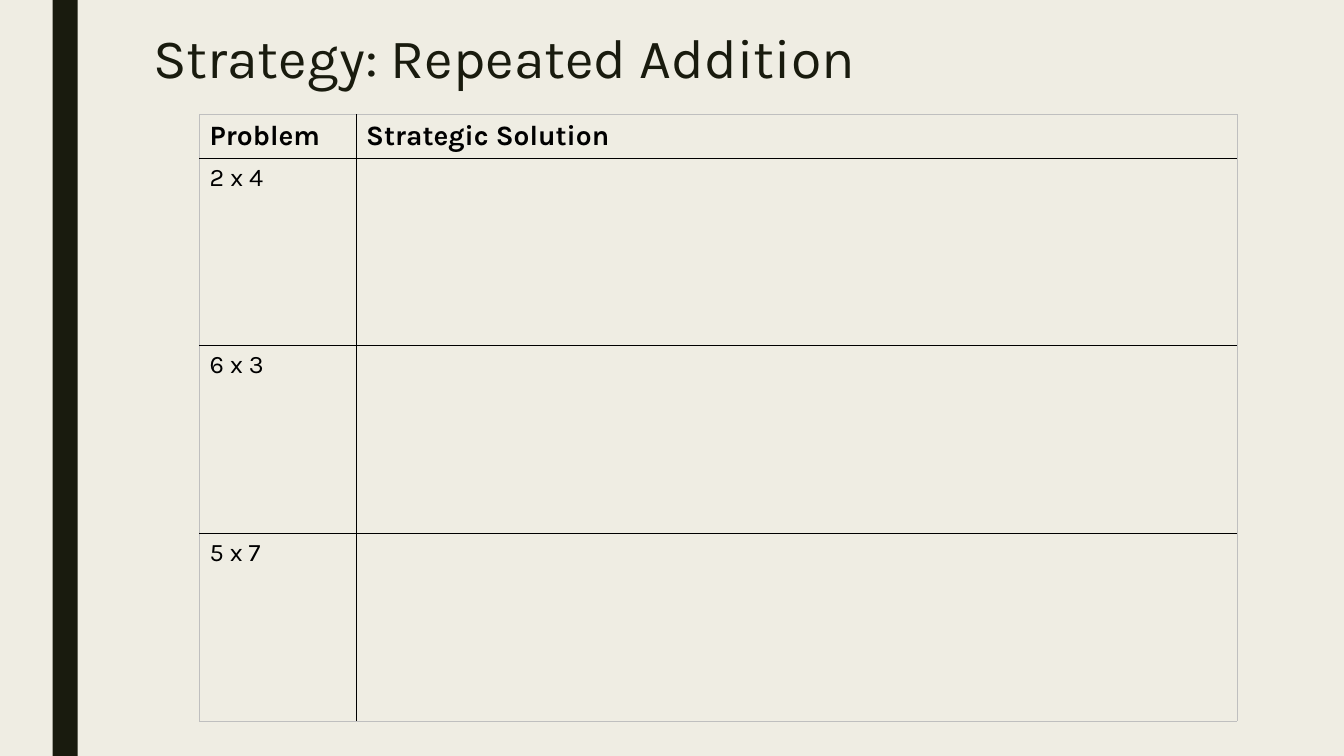
from lxml.etree import SubElement
from pptx import Presentation
from pptx.dml.color import RGBColor
from pptx.enum.shapes import MSO_SHAPE
from pptx.enum.text import MSO_ANCHOR
from pptx.oxml.ns import qn
from pptx.util import Pt

TITLE = "Strategy: Repeated Addition"
ROWS = [
    ("Problem", "Strategic Solution"),
    ("2 x 4", ""),
    ("6 x 3", ""),
    ("5 x 7", ""),
]
THEME = {
    "back": "EFEDE3", "dark": "191B0E", "ink": "000000", "edge": "BFBFBF",
    "face": "Karla", "title": 39.6, "head": 20, "body": 18,
}
PAGE = (960, 540)
BAR = (37.5, 0, 18, 540)
HEAD = (102.24, 16.56, 756, 54)
LEFT, TOP = 142.6, 81.7
COLS = (111.8, 629.2)
HIGH = [30.7] + [134] * (len(ROWS) - 1)


def tint(name):
    return RGBColor.from_string(THEME[name])


def write(frame, text, size, color, bold=False):
    para = frame.paragraphs[0]
    font = para.font
    if text:
        run = para.add_run()
        run.text = text
        font = run.font
    form = {"name": THEME["face"], "size": Pt(THEME[size]), "bold": bold}
    for key, value in form.items():
        setattr(font, key, value)
    font.color.rgb = tint(color)
    return para


def rule(cell, row, col):
    props = cell._tc.get_or_add_tcPr()
    outer = {
        "L": col == 0, "R": col == len(COLS) - 1,
        "T": row == 0, "B": row == len(ROWS) - 1,
    }
    for side, edge in outer.items():
        width = Pt(0.5 if edge else 1)
        line = SubElement(props, qn(f"a:ln{side}"), w=str(width))
        fill = SubElement(line, qn("a:solidFill"))
        SubElement(fill, qn("a:srgbClr"), val=THEME["edge" if edge else "ink"])


def main():
    deck = Presentation()
    deck.slide_width, deck.slide_height = map(Pt, PAGE)
    slide = deck.slides.add_slide(deck.slide_layouts[6])
    slide.background.fill.solid()
    slide.background.fill.fore_color.rgb = tint("back")

    bar = slide.shapes.add_shape(MSO_SHAPE.RECTANGLE, *map(Pt, BAR))
    bar.shadow.inherit = False
    bar.fill.solid()
    bar.fill.fore_color.rgb = tint("dark")
    bar.line.fill.background()

    frame = slide.shapes.add_textbox(*map(Pt, HEAD)).text_frame
    frame.word_wrap = True
    frame.vertical_anchor = MSO_ANCHOR.MIDDLE
    write(frame, TITLE, "title", "dark").line_spacing = 0.89

    size = (LEFT, TOP, sum(COLS), sum(HIGH))
    table = slide.shapes.add_table(len(ROWS), len(COLS), *map(Pt, size)).table
    table.horz_banding = False
    for col, width in enumerate(COLS):
        table.columns[col].width = Pt(width)
    for row, texts in enumerate(ROWS):
        table.rows[row].height = Pt(HIGH[row])
        for col, text in enumerate(texts):
            cell = table.cell(row, col)
            rule(cell, row, col)
            cell.fill.background()
            kind = "body" if row else "head"
            write(cell.text_frame, text, kind, "ink", row == 0)

    deck.save("out.pptx")


if __name__ == "__main__":
    main()
